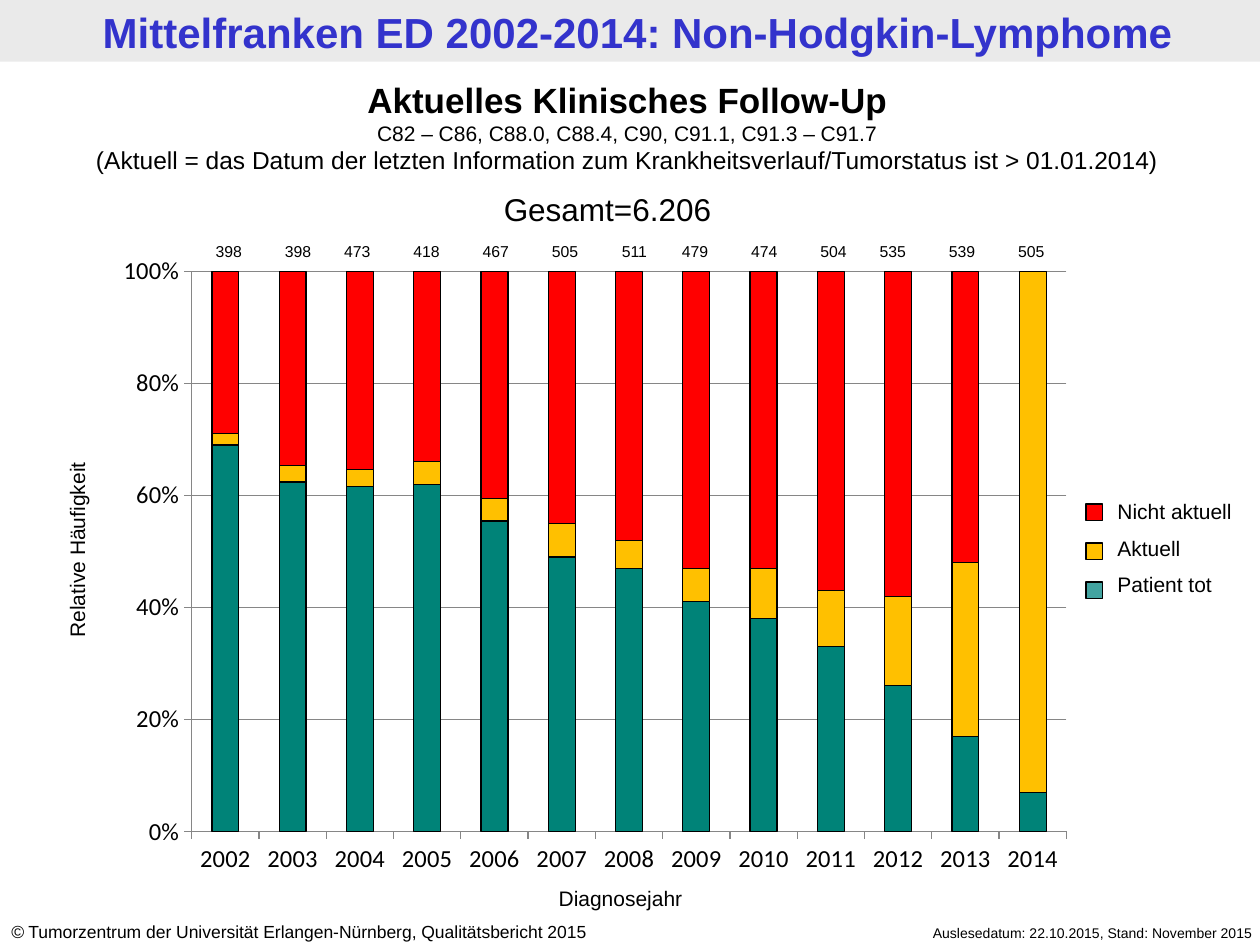
from lxml import etree
from pptx import Presentation
from pptx.chart.data import CategoryChartData
from pptx.dml.color import RGBColor
from pptx.enum.chart import XL_CHART_TYPE, XL_TICK_MARK
from pptx.enum.shapes import MSO_SHAPE
from pptx.enum.text import MSO_ANCHOR, MSO_AUTO_SIZE, PP_ALIGN
from pptx.oxml.ns import qn
from pptx.util import Inches, Pt

STACKED = XL_CHART_TYPE.COLUMN_STACKED_100
TICK_OUT = XL_TICK_MARK.OUTSIDE
RECTANGLE = MSO_SHAPE.RECTANGLE
LEFT, CENTER, RIGHT = PP_ALIGN.LEFT, PP_ALIGN.CENTER, PP_ALIGN.RIGHT

BLACK = RGBColor(0x00, 0x00, 0x00)
TITLE_BLUE = RGBColor(0x33, 0x33, 0xCC)
BAND_GRAY = RGBColor(0xEA, 0xEA, 0xEA)
AXIS_GRAY = RGBColor(0x86, 0x86, 0x86)
TEAL = RGBColor(0x00, 0x83, 0x78)
LEGEND_TEAL = RGBColor(0x00, 0x83, 0x80)
AMBER = RGBColor(0xFF, 0xC0, 0x00)
RED = RGBColor(0xFF, 0x00, 0x00)

YEARS = [str(year) for year in range(2002, 2015)]
FOLLOW_UP = [
    ("Series 1", TEAL, (69, 63, 61, 62, 56, 49, 47, 41, 38, 33, 26, 17, 7)),
    ("Series 2", AMBER, (2, 3, 3, 4, 4, 6, 5, 6, 9, 10, 16, 31, 93)),
    ("Series 3", RED, (29, 35, 35, 34, 41, 45, 48, 53, 53, 57, 58, 52, 0)),
]
CASE_GROUPS = [
    (1.54, ("398", "398")),
    (2.56, ("473", "418", "467", "505", "511")),
    (5.24, ("479", "474", "504")),
    (6.81, ("535", "539", "505")),
]
CASE_STEP = 0.55
LEGEND = [("Nicht aktuell", RED, 100), ("Aktuell", AMBER, 100), ("Patient tot", LEGEND_TEAL, 74)]
PLOT_AREA = {"x": 0.09, "y": 0.04, "w": 0.89, "h": 0.87}


def set_values(target, values):
    for name, value in values.items():
        setattr(target, name, value)


def set_font(font, size, color=BLACK, **values):
    set_values(font, {"name": "Arial", "size": Pt(size), **values})
    font.color.rgb = color


def set_line(line, color, width=0.75):
    line.color.rgb = color
    line.width = Pt(width)


def add_text(slide, box, lines, align=LEFT, gap=0):
    label = slide.shapes.add_textbox(*map(Inches, box))
    frame = label.text_frame
    set_values(frame, {"word_wrap": True, "auto_size": MSO_AUTO_SIZE.SHAPE_TO_FIT_TEXT})
    for index, runs in enumerate(lines):
        paragraph = frame.paragraphs[0] if index == 0 else frame.add_paragraph()
        paragraph.alignment = align
        if index and gap:
            paragraph.space_before = Pt(gap)
        for text, size, style in runs:
            run = paragraph.add_run()
            run.text = text
            set_font(run.font, size, **style)
    return label


def add_rectangle(slide, box, color, outlined=True, opacity=100):
    rectangle = slide.shapes.add_shape(RECTANGLE, *map(Inches, box))
    rectangle.shadow.inherit = False
    rectangle.fill.solid()
    rectangle.fill.fore_color.rgb = color
    if outlined:
        set_line(rectangle.line, BLACK)
    else:
        rectangle.line.fill.background()
    if opacity < 100:
        tint = rectangle.element.spPr.find(qn("a:solidFill"))[0]
        etree.SubElement(tint, qn("a:alpha"), val=str(opacity * 1000))
    return rectangle


def add_header(slide):
    title = slide.shapes.title
    set_values(title, {"left": Inches(0.06), "top": Inches(0.01),
                       "width": Inches(10), "height": Inches(0.49)})
    frame = title.text_frame
    frame.text = "Mittelfranken ED 2002-2014: Non-Hodgkin-Lymphome"
    set_values(frame, {"margin_left": Inches(0.09), "margin_right": Inches(0.09),
                       "margin_top": Inches(0.04), "margin_bottom": Inches(0.04),
                       "vertical_anchor": MSO_ANCHOR.MIDDLE, "word_wrap": True})
    frame.paragraphs[0].alignment = CENTER
    set_font(frame.paragraphs[0].runs[0].font, 24, TITLE_BLUE, bold=True)
    band = add_rectangle(slide, (0, 0, 10, 0.49), BAND_GRAY, outlined=False)
    title.element.addprevious(band.element)


def fix_plot_area(chart):
    plot_area = chart.element.find(".//" + qn("c:plotArea"))
    for automatic in plot_area.findall(qn("c:layout")):
        plot_area.remove(automatic)
    layout = etree.Element(qn("c:layout"))
    plot_area.insert(0, layout)
    manual = etree.SubElement(layout, qn("c:manualLayout"))
    settings = {"layoutTarget": "inner", "xMode": "edge", "yMode": "edge", **PLOT_AREA}
    for tag, value in settings.items():
        etree.SubElement(manual, qn("c:" + tag), val=str(value))


def add_follow_up_chart(slide):
    data = CategoryChartData()
    data.categories = YEARS
    for name, _, shares in FOLLOW_UP:
        data.add_series(name, shares)
    area = map(Inches, (0.82, 1.95, 7.8, 5.11))
    chart = slide.shapes.add_chart(STACKED, *area, data).chart
    set_values(chart, {"has_legend": False, "has_title": False})
    set_font(chart.font, 18, name="Calibri")

    plot = chart.plots[0]
    set_values(plot, {"gap_width": 150, "overlap": 100, "vary_by_categories": False})
    for series, (_, color, _) in zip(plot.series, FOLLOW_UP):
        series.format.fill.solid()
        series.format.fill.fore_color.rgb = color
        set_line(series.format.line, BLACK)

    for axis in (chart.category_axis, chart.value_axis):
        axis.major_tick_mark = TICK_OUT
        set_font(axis.tick_labels.font, 14, name="Calibri")
        set_line(axis.format.line, AXIS_GRAY)
    shares_axis = chart.value_axis
    set_values(shares_axis, {"minimum_scale": 0, "maximum_scale": 1,
                             "major_unit": 0.2, "has_major_gridlines": True})
    set_values(shares_axis.tick_labels,
               {"number_format": "0%", "number_format_is_linked": False})
    set_line(shares_axis.major_gridlines.format.line, AXIS_GRAY)
    fix_plot_area(chart)


def add_case_counts(slide):
    for start, counts in CASE_GROUPS:
        for index, count in enumerate(counts):
            box = (start + index * CASE_STEP, 1.87, CASE_STEP, 0.25)
            add_text(slide, box, [[(count, 9, {})]], CENTER)


def add_legend(slide):
    names = [[(name, 12, {})] for name, _, _ in LEGEND]
    add_text(slide, (8.77, 3.91, 1.42, 0.91), names, gap=6.5)
    for index, (_, color, opacity) in enumerate(LEGEND):
        key = (8.62, 4 + index * 0.31, 0.13, 0.13)
        add_rectangle(slide, key, color, opacity=opacity)


def main():
    deck = Presentation()
    set_values(deck, {"slide_width": Inches(10), "slide_height": Inches(7.5)})
    slide = deck.slides.add_slide(deck.slide_layouts[5])

    add_header(slide)
    add_text(slide, (6.65, 7.29, 3.39, 0.24),
             [[("Auslesedatum: 22.10.2015, Stand: November 2015", 8, {})]], RIGHT)
    add_text(slide, (-0.01, 7.26, 5.24, 0.27), [[
        ("©", 10, {"italic": True}),
        (" Tumorzentrum der Universität Erlangen-Nürnberg, Qualitätsbericht 2015", 10, {}),
    ]])
    add_follow_up_chart(slide)
    share_label = add_text(slide, (-0.59, 4.21, 2.41, 0.31),
                           [[("Relative Häufigkeit", 12, {})]], CENTER)
    share_label.rotation = 270
    add_text(slide, (3.8, 6.98, 2.25, 0.31), [[("Diagnosejahr", 12, {})]], CENTER)
    add_case_counts(slide)
    add_legend(slide)
    add_text(slide, (-0.04, 0.57, 10.04, 0.91), [
        [("Aktuelles Klinisches Follow-Up", 20, {"bold": True})],
        [("C82 – C86, C88.0, C88.4, C90, C91.1, C91.3 – C91.7", 12, {})],
        [("(Aktuell = das Datum der letzten Information zum "
          "Krankheitsverlauf/Tumorstatus ist > 01.01.2014)", 14, {})],
    ], CENTER)
    add_text(slide, (3.9, 1.46, 2.2, 0.4), [[("Gesamt=6.206", 18, {})]])
    deck.save("out.pptx")


if __name__ == "__main__":
    main()
